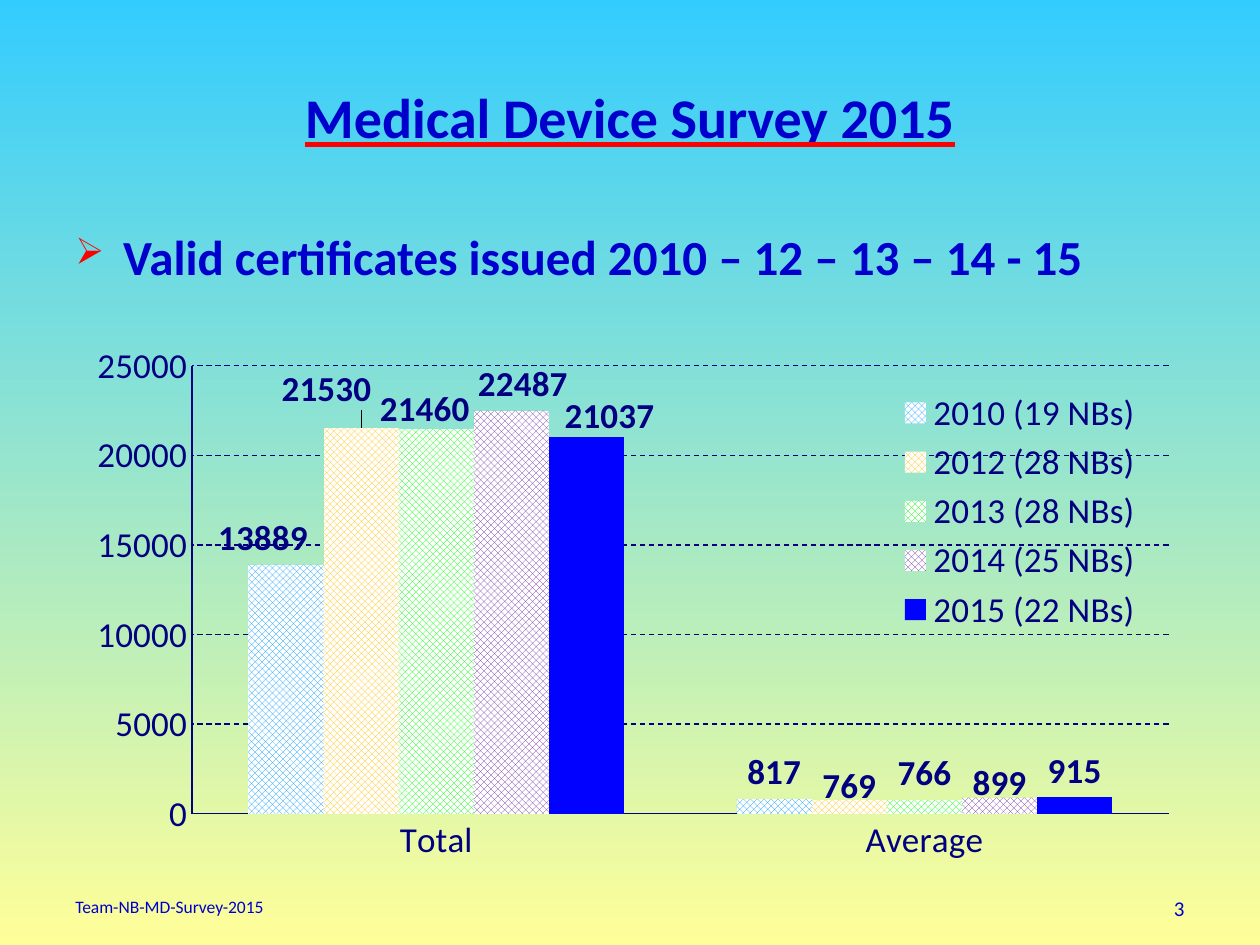
from dataclasses import dataclass, field

from pptx import Presentation
from pptx import util as u
from pptx.chart.data import CategoryChartData
from pptx.dml.color import RGBColor
from pptx.enum import chart as charts, dml, text
from pptx.oxml import parse_xml
from pptx.oxml.ns import nsdecls

SKY = RGBColor(0x33, 0xCC, 0xFF)
LEMON = RGBColor(0xFF, 0xFF, 0x99)
BLUE = RGBColor(0x00, 0x00, 0xCC)
NAVY = RGBColor(0x00, 0x00, 0x80)
WHITE = RGBColor(0xFF, 0xFF, 0xFF)
RED = RGBColor(0xFF, 0x00, 0x00)
FONT = "Calibri"
CATEGORIES = ("Total", "Average")


@dataclass
class Year:
    name: str
    values: tuple[int, int]
    color: RGBColor
    patterned: bool = True
    # Label shifts per point, as fractions of the chart size
    shifts: dict[int, tuple[float, float]] = field(default_factory=dict)


YEARS = (
    Year("2010 (19 NBs)", (13889, 817), RGBColor(0x00, 0x99, 0xFF), shifts={0: (-0.02, 0)}),
    Year("2012 (28 NBs)", (21530, 769), RGBColor(0xFF, 0xC0, 0x00),
         shifts={0: (-0.03, -0.02), 1: (0, 0.02)}),
    Year("2013 (28 NBs)", (21460, 766), RGBColor(0x00, 0xFF, 0x00), shifts={0: (-0.01, 0.01)}),
    Year("2014 (25 NBs)", (22487, 899), RGBColor(0x70, 0x30, 0xA0),
         shifts={0: (0.01, 0), 1: (0, 0.02)}),
    Year("2015 (22 NBs)", (21037, 915), RGBColor(0x01, 0x01, 0xFF), False, {0: (0.02, 0.01)}),
)


def style_font(font, size: int, color: RGBColor, bold: bool = False) -> None:
    font.size = u.Pt(size)
    font.bold = bold
    font.color.rgb = color
    font.name = FONT


def add_text(page, words: str, left: float, top: float, width: float, height: float,
             size: int, bold: bool = False, align=text.PP_ALIGN.LEFT,
             anchor=text.MSO_ANCHOR.TOP):
    box = page.shapes.add_textbox(*map(u.Inches, (left, top, width, height)))
    box.text_frame.word_wrap = True
    box.text_frame.vertical_anchor = anchor
    para = box.text_frame.paragraphs[0]
    para.alignment = align
    span = para.add_run()
    span.text = words
    style_font(span.font, size, BLUE, bold)
    return box


def underline_red(box) -> None:
    box.text_frame.paragraphs[0].runs[0].font.underline = True
    box.element.xpath(".//a:latin")[0].addprevious(parse_xml(
        f'<a:uFill {nsdecls("a")}><a:solidFill><a:srgbClr val="{RED}"/></a:solidFill></a:uFill>'))


def add_arrow_bullet(box) -> None:
    props = box.element.xpath(".//a:pPr")[0]
    indent = u.Inches(0.38)
    props.set("marL", str(indent))
    props.set("indent", str(-indent))
    for item in (f'<a:buClr {nsdecls("a")}><a:srgbClr val="{RED}"/></a:buClr>',
                 f'<a:buSzPct {nsdecls("a")} val="75000"/>',
                 f'<a:buChar {nsdecls("a")} char="➢"/>'):
        props.append(parse_xml(item))


def manual_layout(modes: dict[str, str], **places: float):
    """Build a c:layout element; modes come before the positions and sizes."""
    parts = [f'<c:{tag} val="{value}"/>' for tag, value in (modes | places).items()]
    return parse_xml(f'<c:layout {nsdecls("c")}><c:manualLayout>{"".join(parts)}'
                     '</c:manualLayout></c:layout>')


def style_axis(axis) -> None:
    axis.major_tick_mark = axis.minor_tick_mark = charts.XL_TICK_MARK.NONE
    style_font(axis.tick_labels.font, 20, NAVY)
    style_line(axis.format.line)


def style_line(line) -> None:
    line.color.rgb = NAVY
    line.width = u.Pt(0.75)


def style_series(series, element, year: Year) -> None:
    fill = series.format.fill
    if year.patterned:
        fill.patterned()
        fill.pattern = dml.MSO_PATTERN.LARGE_CHECKER_BOARD
        fill.fore_color.rgb = year.color
        fill.back_color.rgb = WHITE
    else:
        fill.solid()
        fill.fore_color.rgb = year.color
    labels = series.data_labels
    labels.show_value = True
    labels.position = charts.XL_LABEL_POSITION.OUTSIDE_END
    style_font(labels.font, 20, NAVY, True)
    for index, (x, y) in year.shifts.items():
        label = series.points[index].data_label
        label.position = charts.XL_LABEL_POSITION.OUTSIDE_END
        style_font(label.font, 20, NAVY, True)
        mark = element.xpath(f"c:dLbls/c:dLbl/c:idx[@val='{index}']")[0]
        mark.addnext(manual_layout({}, x=x, y=y))


def add_certificate_chart(page) -> None:
    data = CategoryChartData()
    data.categories = CATEGORIES
    for year in YEARS:
        data.add_series(year.name, year.values)
    chart = page.shapes.add_chart(
        charts.XL_CHART_TYPE.COLUMN_CLUSTERED,
        *map(u.Inches, (0.5, 2.18, 9.15, 4.88)), data).chart
    chart.has_title = False
    chart.font.size = u.Pt(10)
    chart.font.name = "Arial"
    plot = chart.plots[0]
    plot.gap_width = 150
    plot.overlap = 0
    plot.vary_by_categories = False

    style_axis(chart.category_axis)
    values = chart.value_axis
    style_axis(values)
    values.minimum_scale, values.maximum_scale, values.major_unit = 0, 25000, 5000
    style_line(values.major_gridlines.format.line)
    values.major_gridlines.format.line.dash_style = dml.MSO_LINE.DASH

    for series, element, year in zip(plot.series, chart.element.xpath(".//c:ser"), YEARS):
        style_series(series, element, year)

    chart.has_legend = True
    chart.legend.position = charts.XL_LEGEND_POSITION.RIGHT
    chart.legend.include_in_layout = True
    style_font(chart.legend.font, 20, NAVY)
    edges = {"xMode": "edge", "yMode": "edge"}
    for old in chart.element.xpath(".//c:plotArea/c:layout | .//c:legend/c:layout"):
        old.getparent().remove(old)
    chart.element.xpath(".//c:plotArea")[0].insert(0, manual_layout(
        {"layoutTarget": "inner"} | edges, x=0.112, y=0.148, w=0.847, h=0.729))
    chart.element.xpath(".//c:legendPos")[0].addnext(
        manual_layout(edges, x=0.72, y=0.18, w=0.22, h=0.41))


def main() -> None:
    deck = Presentation()
    deck.slide_width, deck.slide_height = u.Inches(10), u.Inches(7.5)
    page = deck.slides.add_slide(deck.slide_layouts[6])
    fill = page.background.fill
    fill.gradient()
    fill.gradient_angle = 270
    for stop, color, position in zip(fill.gradient_stops, (SKY, LEMON), (0, 1)):
        stop.color.rgb = color
        stop.position = position

    underline_red(add_text(page, "Medical Device Survey 2015", 0.5, 0.3, 9, 1.25, 32, True,
                           text.PP_ALIGN.CENTER, text.MSO_ANCHOR.MIDDLE))
    add_text(page, "3", 7.17, 7.06, 2.33, 0.29, 12, align=text.PP_ALIGN.RIGHT)
    add_arrow_bullet(add_text(page, "Valid certificates issued 2010 – 12 – 13 – 14 - 15",
                              0.5, 1.75, 9, 0.82, 28, True))
    add_text(page, "Team-NB-MD-Survey-2015", 0.5, 7.06, 3.17, 0.29, 10)
    add_certificate_chart(page)
    deck.save("out.pptx")


if __name__ == "__main__":
    main()
